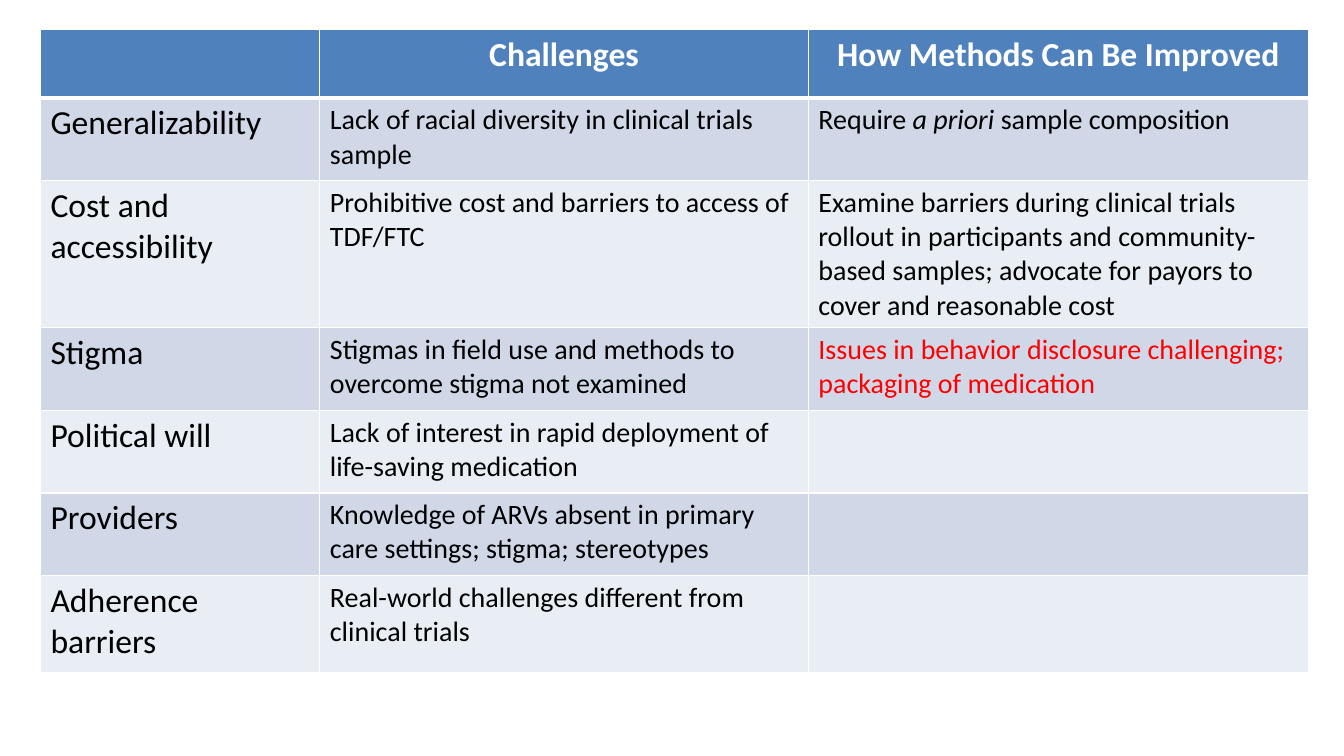
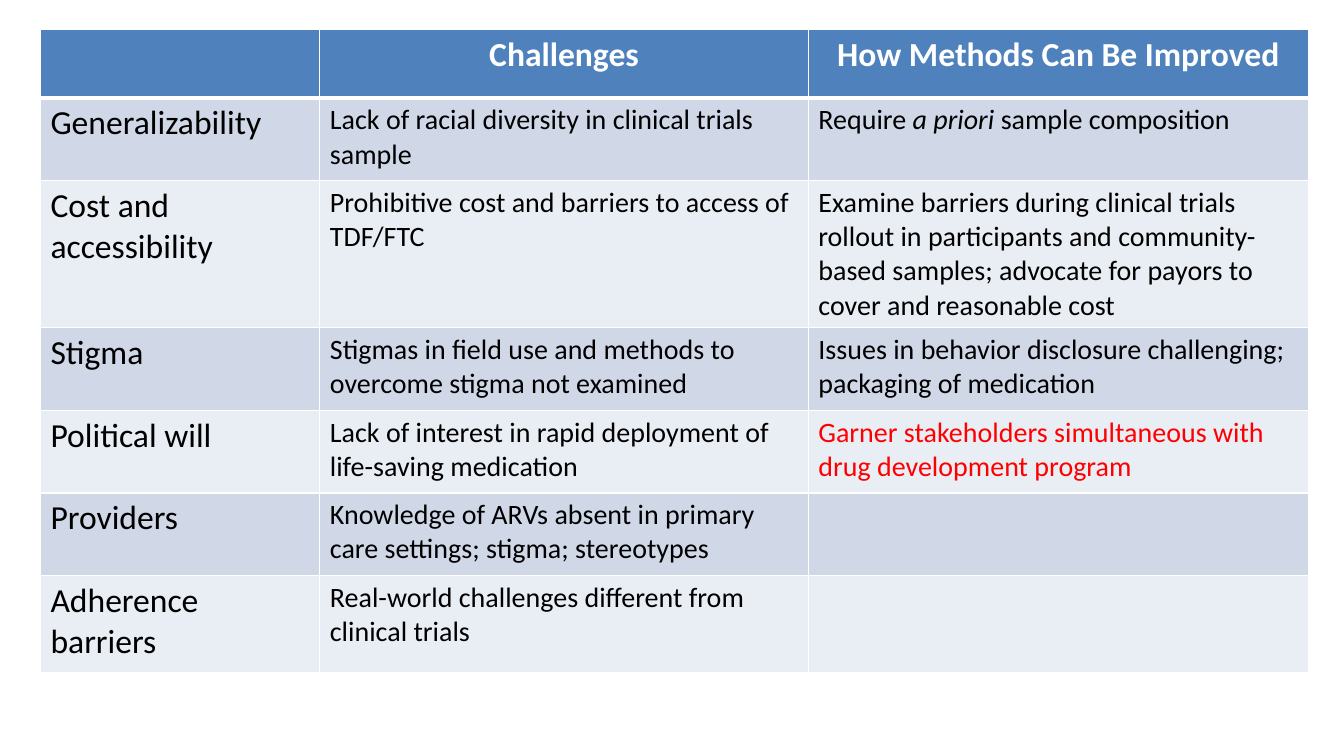
from lxml import etree
from pptx import Presentation
from pptx.dml.color import RGBColor
from pptx.enum.text import PP_ALIGN
from pptx.oxml.ns import qn
from pptx.util import Cm, Pt

CENTER, LEFT = PP_ALIGN.CENTER, PP_ALIGN.LEFT
FONT = "Calibri"
WHITE, BLACK, RED, BLUE = "FFFFFF", "000000", "FF0000", "4F81BD"
BANDS = ("D0D8E8", "E9EDF4")

# Content: topic and challenge of each row
HEADINGS = ("", "Challenges", "How Methods Can Be Improved")
TOPICS = [
    ("Generalizability", "Lack of racial diversity in clinical trials sample"),
    ("Cost and accessibility", "Prohibitive cost and barriers to access of TDF/FTC"),
    ("Stigma", "Stigmas in field use and methods to overcome stigma not examined"),
    ("Political will", "Lack of interest in rapid deployment of life-saving medication"),
    ("Providers", "Knowledge of ARVs absent in primary care settings; stigma; stereotypes"),
    ("Adherence barriers", "Real-world challenges different from clinical trials"),
]
# Improvements in row order; asterisks enclose italics
IMPROVEMENTS = [
    "Require *a priori *sample composition",
    "Examine barriers during clinical trials rollout in participants and "
    "community-based samples; advocate for payors to cover and reasonable cost",
    "Issues in behavior disclosure challenging; packaging of medication",
    "Garner stakeholders simultaneous with drug development program",
]
# Each slide shows this many improvements, the newest in red
SHOWN_COUNTS = (3, 4)

# Table geometry in centimetres
TABLE_LEFT, TABLE_TOP = 1.02, 0.74
COLUMN_WIDTHS = (7.04, 12.31, 12.6)
ROW_HEIGHTS = (1.73, 2.08, 3.7, 2.08, 2.08, 2.08, 2.44)


def rgb(color):
    return RGBColor.from_string(color)


def write(cell, text, size=20, color=BLACK, bold=False, align=LEFT):
    para = cell.text_frame.paragraphs[0]
    para.alignment = align
    for index, part in enumerate(text.split("*")):
        if not part:
            continue
        span = para.add_run()
        span.text = part
        span.font.name = FONT
        span.font.size = Pt(size)
        span.font.color.rgb = rgb(color)
        span.font.bold = bold
        span.font.italic = index % 2 == 1


def style_cell(cell, fill, top=1, bottom=1):
    properties = cell._tc.get_or_add_tcPr()
    for side, width in (("L", 1), ("R", 1), ("T", top), ("B", bottom)):
        line = etree.SubElement(properties, qn(f"a:ln{side}"), w=str(Pt(width)))
        solid = etree.SubElement(line, qn("a:solidFill"))
        etree.SubElement(solid, qn("a:srgbClr"), val=WHITE)
    cell.fill.solid()
    cell.fill.fore_color.rgb = rgb(fill)


def add_methods_table(page, shown):
    table = page.shapes.add_table(
        len(ROW_HEIGHTS), len(COLUMN_WIDTHS), Cm(TABLE_LEFT), Cm(TABLE_TOP),
        Cm(sum(COLUMN_WIDTHS)), Cm(sum(ROW_HEIGHTS))).table
    table.horz_banding = False
    for column, width in zip(table.columns, COLUMN_WIDTHS):
        column.width = Cm(width)
    for row, height in zip(table.rows, ROW_HEIGHTS):
        row.height = Cm(height)

    # Header row with a heavy rule below
    for column, heading in enumerate(HEADINGS):
        cell = table.cell(0, column)
        style_cell(cell, BLUE, bottom=3)
        write(cell, heading, size=24, color=WHITE, bold=True, align=CENTER)

    # Banded topic rows
    for row, (topic, challenge) in enumerate(TOPICS, start=1):
        improvement = IMPROVEMENTS[row - 1] if row <= shown else ""
        cells = [table.cell(row, column) for column in range(len(COLUMN_WIDTHS))]
        for cell in cells:
            style_cell(cell, BANDS[(row - 1) % 2], top=3 if row == 1 else 1)
        write(cells[0], topic, size=24)
        write(cells[1], challenge)
        write(cells[2], improvement, color=RED if row == shown else BLACK)


def main():
    deck = Presentation()
    deck.slide_width, deck.slide_height = Cm(33.87), Cm(19.05)
    blank = deck.slide_layouts[6]
    for shown in SHOWN_COUNTS:
        add_methods_table(deck.slides.add_slide(blank), shown)
    deck.save("out.pptx")


if __name__ == "__main__":
    main()
